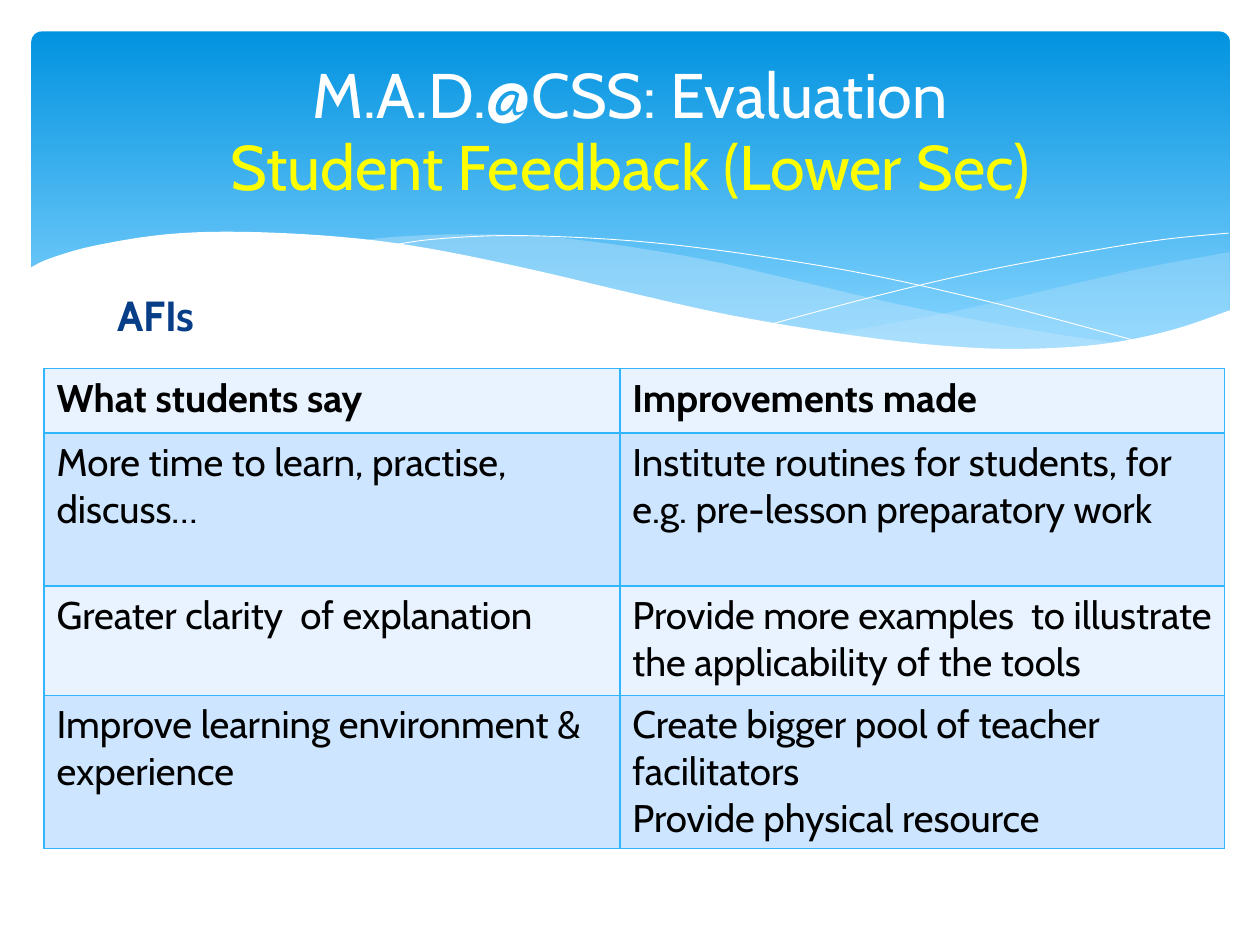
from dataclasses import dataclass

import pptx
import pptx.dml.color
import pptx.enum.shapes
import pptx.enum.text
import pptx.oxml
import pptx.oxml.ns
import pptx.util

Pt = pptx.util.Pt


@dataclass(frozen=True)
class Theme:
    font: str = "Cabin"
    white: str = "FFFFFF"
    black: str = "000000"
    yellow: str = "FFFF00"
    navy: str = "073E87"
    sky_top: str = "0293E0"
    sky_bottom: str = "83D3FE"
    wave: str = "C6E7FC"
    border: str = "31B6FD"
    rows: tuple = ("E8F3FF", "CDE5FE")
    title_size: int = 36
    label_size: int = 24
    table_size: int = 22


THEME = Theme()

RIGHT_WAVE_TOP = [(702.7, 144), (652.3, 153.4), (599, 165.6), (542.2, 178.6), (475.9, 190.8)]
RIGHT_WAVE_BOTTOM = [(475.9, 190.8), (507.6, 195.1), (545, 198.7), (586, 200.2),
                     (627.8, 197.3), (663, 190.8), (702.7, 177.8)]
LONG_WAVE_TOP = [(643, 196.6), (602.6, 190.8), (558, 182.9), (508.3, 172.8), (452.9, 159.8),
                 (409.7, 149.8), (370, 142.6), (334, 137.5), (302.4, 134.6), (260, 133.9),
                 (225.4, 135.4), (206, 137.5)]
LONG_WAVE_BOTTOM = [(206, 137.5), (246.2, 143.3), (290.9, 151.9), (323.3, 159.8),
                    (381.6, 172.8), (432.7, 183.6), (478.8, 191.5), (519.8, 197.3),
                    (556.6, 200.2), (596.2, 200.4), (643, 196.6)]
FALLING_LINE = [(222.5, 140.4), (247, 136.8), (288.7, 134.6), (337.7, 136.1), (383, 139.7),
                (437.8, 146.9), (500.4, 157.7), (572.4, 174.2), (653, 195.8)]
RISING_LINE = [(441.4, 185), (500.4, 169.2), (558.7, 155.5), (623.5, 143.3),
               (665.3, 136.8), (702, 133.2)]
WHITE_WAVE_TOP = [(703.4, 177.1), (669.6, 188.6), (630, 196.6), (582.5, 199.4), (535.7, 197.3),
                  (481, 190.8), (416.9, 180), (362.2, 167.8), (301, 153.4), (244, 141.8),
                  (195, 135.4), (139, 132.5), (95, 133.9), (54, 140.4), (28.8, 147.6),
                  (16.6, 153.4)]
WHITE_WAVE_BASE = [(16.6, 236.9), (703.4, 236.9)]

FEEDBACK = [
    ("What students say", "Improvements made"),
    ("More time to learn, practise, discuss…",
     "Institute routines for students, for e.g. pre-lesson preparatory work"),
    ("Greater clarity  of explanation",
     "Provide more examples  to illustrate the applicability of the tools"),
    ("Improve learning environment & experience",
     "Create bigger pool of teacher facilitators\nProvide physical resource"),
]
COLUMN_WIDTHS = (329, 345.6)
ROW_HEIGHTS = (36.7, 87.5, 62.5, 87.5)


def rgb(value):
    return pptx.dml.color.RGBColor.from_string(value)


def apply(target, values):
    for name, value in values.items():
        setattr(target, name, value)


def write(para, text, size, color, bold=False):
    span = para.add_run()
    span.text = text
    apply(span.font, {"name": THEME.font, "size": Pt(size), "bold": bold})
    span.font.color.rgb = rgb(color)


def smooth(knots, steps=5):
    padded = [knots[0], *knots, knots[-1]]
    points = [knots[0]]
    for a, b, c, d in zip(padded, padded[1:], padded[2:], padded[3:]):
        for step in range(1, steps + 1):
            t = step / steps
            points.append(tuple(
                (2 * q + (r - p) * t + (2 * p - 5 * q + 4 * r - s) * t ** 2
                 + (3 * q - p - 3 * r + s) * t ** 3) / 2
                for p, q, r, s in zip(a, b, c, d)))
    return points


def add_outline(page, points, closed):
    start, *rest = [(Pt(x), Pt(y)) for x, y in points]
    builder = page.shapes.build_freeform(*start)
    builder.add_line_segments(rest, close=closed)
    outline = builder.convert_to_shape()
    outline.shadow.inherit = False
    return outline


def add_wave(page, points, color, opacity=100):
    wave = add_outline(page, points, True)
    wave.fill.solid()
    wave.fill.fore_color.rgb = rgb(color)
    wave.line.fill.background()
    if opacity < 100:
        tone = wave.element.spPr.find(".//" + pptx.oxml.ns.qn("a:srgbClr"))
        tone.append(pptx.oxml.parse_xml(
            f'<a:alpha {pptx.oxml.ns.nsdecls("a")} val="{opacity * 1000}"/>'))


def add_curve(page, knots):
    curve = add_outline(page, smooth(knots), False)
    curve.fill.background()
    curve.line.color.rgb = rgb(THEME.white)
    curve.line.width = Pt(0.5)


def add_header(page):
    panel = page.shapes.add_shape(
        pptx.enum.shapes.MSO_SHAPE.ROUNDED_RECTANGLE, Pt(18), Pt(18), Pt(684.7), Pt(194.4))
    panel.adjustments[0] = 0.03
    panel.shadow.inherit = False
    panel.line.fill.background()
    panel.fill.gradient()
    panel.fill.gradient_angle = 270
    stops = ((0, THEME.sky_top), (0.9, THEME.sky_bottom))
    for stop, (position, color) in zip(panel.fill.gradient_stops, stops):
        stop.position = position
        stop.color.rgb = rgb(color)
    add_wave(page, smooth(RIGHT_WAVE_TOP) + smooth(RIGHT_WAVE_BOTTOM), THEME.wave, 29)
    add_wave(page, smooth(LONG_WAVE_TOP) + smooth(LONG_WAVE_BOTTOM), THEME.wave, 40)
    add_curve(page, FALLING_LINE)
    add_curve(page, RISING_LINE)
    add_wave(page, smooth(WHITE_WAVE_TOP) + WHITE_WAVE_BASE, THEME.white)


def set_borders(cell):
    properties = cell._tc.get_or_add_tcPr()
    for index, side in enumerate(("lnL", "lnR", "lnT", "lnB")):
        properties.insert(index, pptx.oxml.parse_xml(
            f'<a:{side} {pptx.oxml.ns.nsdecls("a")} w="{Pt(1)}"><a:solidFill>'
            f'<a:srgbClr val="{THEME.border}"/></a:solidFill></a:{side}>'))


def add_feedback_table(page):
    table = page.shapes.add_table(
        len(ROW_HEIGHTS), len(COLUMN_WIDTHS), Pt(25.2), Pt(210.7),
        Pt(sum(COLUMN_WIDTHS)), Pt(sum(ROW_HEIGHTS))).table
    for column, width in zip(table.columns, COLUMN_WIDTHS):
        column.width = Pt(width)
    for index, (texts, height) in enumerate(zip(FEEDBACK, ROW_HEIGHTS)):
        table.rows[index].height = Pt(height)
        for cell, text in zip(table.rows[index].cells, texts):
            cell.fill.solid()
            cell.fill.fore_color.rgb = rgb(THEME.rows[index % 2])
            set_borders(cell)
            for number, line in enumerate(text.split("\n")):
                frame = cell.text_frame
                para = frame.add_paragraph() if number else frame.paragraphs[0]
                write(para, line, THEME.table_size, THEME.black, index == 0)


def add_title(page):
    title = page.shapes.title
    title.element.getparent().append(title.element)
    apply(title, {"left": Pt(36), "top": Pt(26.6), "width": Pt(648), "height": Pt(98.6)})
    apply(title.text_frame, {
        "word_wrap": True,
        "auto_size": pptx.enum.text.MSO_AUTO_SIZE.NONE,
        "vertical_anchor": pptx.enum.text.MSO_ANCHOR.MIDDLE})
    para = title.text_frame.paragraphs[0]
    apply(para, {"alignment": pptx.enum.text.PP_ALIGN.CENTER, "line_spacing": 0.95})
    write(para, "M.A.D.@CSS: Evaluation", THEME.title_size, THEME.white)
    para.add_line_break()
    write(para, "Student Feedback (Lower Sec)", THEME.title_size, THEME.yellow)


def add_label(page):
    box = page.shapes.add_textbox(Pt(59.8), Pt(162), Pt(215.3), Pt(36.7))
    box.text_frame.word_wrap = True
    write(box.text_frame.paragraphs[0], "AFIs", THEME.label_size, THEME.navy, True)


def main():
    deck = pptx.Presentation()
    apply(deck, {"slide_width": Pt(720), "slide_height": Pt(540)})
    page = deck.slides.add_slide(deck.slide_layouts.get_by_name("Title Only"))
    add_header(page)
    add_feedback_table(page)
    add_title(page)
    add_label(page)
    deck.save("out.pptx")


if __name__ == "__main__":
    main()
